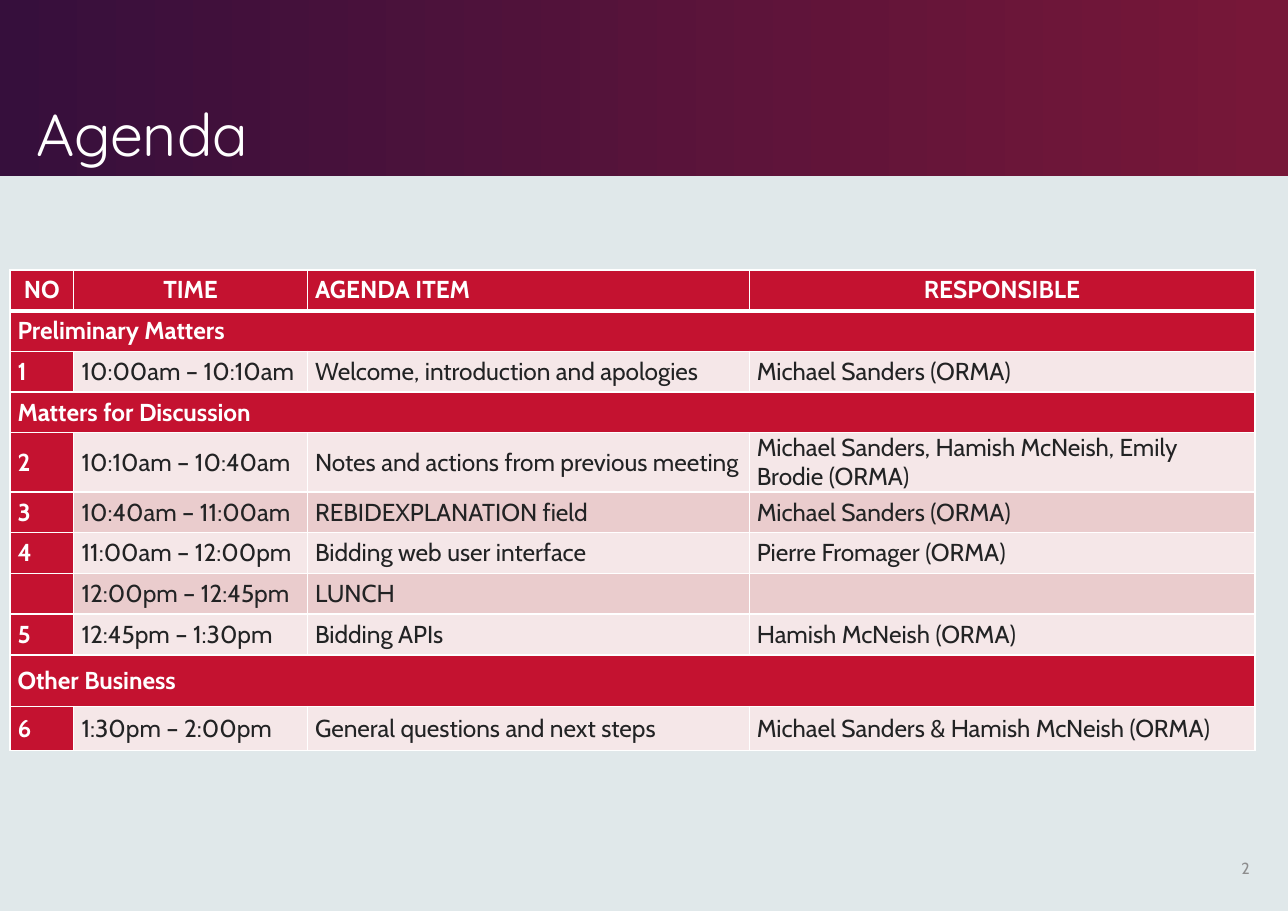
"""Build the Agenda slide with its timetable of meeting items."""
from dataclasses import dataclass

from lxml.etree import SubElement
from pptx import Presentation
from pptx.dml.color import RGBColor
from pptx.enum.shapes import MSO_SHAPE
from pptx.enum.text import MSO_ANCHOR, MSO_AUTO_SIZE, PP_ALIGN
from pptx.oxml.ns import qn
from pptx.slide import Slide
from pptx.table import Table, _Cell
from pptx.text.text import TextFrame
from pptx.util import Inches, Pt


@dataclass(frozen=True)
class Theme:
    heading_font: str = "Quicksand"
    body_font: str = "Cabin"
    title_size: float = 38.6
    table_size: float = 16
    number_size: float = 10.5
    background: str = "E0E8EA"
    band_start: str = "360F3C"
    band_end: str = "771738"
    red: str = "C41230"
    light_row: str = "F5E7E8"
    dark_row: str = "EACCCD"
    white: str = "FFFFFF"
    ink: str = "222324"
    grey: str = "8D8D8E"


@dataclass(frozen=True)
class Section:
    heading: str
    height: float = 0.37


@dataclass(frozen=True)
class Item:
    number: str
    time: str
    topic: str
    responsible: str = ""
    height: float = 0.37


THEME = Theme()
SLIDE_WIDTH, SLIDE_HEIGHT = 11.69, 8.27
COLUMN_WIDTHS = (0.58, 2.12, 4.01, 4.59)
HEADINGS = Item("NO", "TIME", "AGENDA ITEM", "RESPONSIBLE")
AGENDA: tuple[Section | Item, ...] = (
    Section("Preliminary Matters"),
    Item("1", "10:00am – 10:10am", "Welcome, introduction and apologies", "Michael Sanders (ORMA)"),
    Section("Matters for Discussion"),
    Item("2", "10:10am – 10:40am", "Notes and actions from previous meeting",
         "Michael Sanders, Hamish McNeish, Emily Brodie (ORMA)", 0.53),
    Item("3", "10:40am – 11:00am", "REBIDEXPLANATION field", "Michael Sanders (ORMA)"),
    Item("4", "11:00am – 12:00pm", "Bidding web user interface", "Pierre Fromager (ORMA)"),
    Item("", "12:00pm – 12:45pm", "LUNCH"),
    Item("5", "12:45pm – 1:30pm", "Bidding APIs", "Hamish McNeish (ORMA)"),
    Section("Other Business", 0.47),
    Item("6", "1:30pm – 2:00pm", "General questions and next steps",
         "Michael Sanders & Hamish McNeish (ORMA)", 0.4),
)


def write(frame: TextFrame, text: str, font: str, size: float, color: str,
          bold: bool = False, align: PP_ALIGN = PP_ALIGN.LEFT) -> None:
    """Write one formatted run into the first paragraph of a frame."""
    paragraph = frame.paragraphs[0]
    paragraph.alignment = align
    paragraph.font.size = Pt(size)
    if text:
        run = paragraph.add_run()
        run.text = text
        run.font.name = font
        run.font.size = Pt(size)
        run.font.bold = bold
        run.font.color.rgb = RGBColor.from_string(color)


def draw_border(cell: _Cell, side: str, width: float) -> None:
    """Add a white line on one side of a cell."""
    line = SubElement(cell._tc.get_or_add_tcPr(), qn(f"a:ln{side}"), w=str(Pt(width)))
    SubElement(SubElement(line, qn("a:solidFill")), qn("a:srgbClr"), val=THEME.white)


def style_cell(cell: _Cell, fill: str, top: float = 1, bottom: float = 1) -> None:
    """Set the borders, fill, insets and anchor of a cell."""
    for side, width in (("L", 1), ("R", 1), ("T", top), ("B", bottom)):
        draw_border(cell, side, width)
    cell.fill.solid()
    cell.fill.fore_color.rgb = RGBColor.from_string(fill)
    cell.margin_left = cell.margin_right = Inches(0.07)
    cell.margin_top = cell.margin_bottom = 0
    cell.vertical_anchor = MSO_ANCHOR.MIDDLE


def fill_row(table: Table, index: int, entry: Section | Item) -> None:
    """Write a section heading, the column headings or an agenda item."""
    table.rows[index].height = Inches(entry.height)
    is_header, is_section = index == 0, isinstance(entry, Section)
    texts = ((entry.heading, "", "", "") if isinstance(entry, Section)
             else (entry.number, entry.time, entry.topic, entry.responsible))
    row_fill = THEME.dark_row if index % 2 else THEME.light_row
    for column, text in enumerate(texts):
        cell = table.cell(index, column)
        strong = is_header or is_section or column == 0
        style_cell(cell, THEME.red if strong else row_fill,
                   top=3 if index == 1 else 1, bottom=3 if is_header else 1)
        centred = is_header and column != 2
        write(cell.text_frame, text, THEME.body_font, THEME.table_size,
              THEME.white if strong else THEME.ink, strong,
              PP_ALIGN.CENTER if centred else PP_ALIGN.LEFT)
    if is_section:
        table.cell(index, 0).merge(table.cell(index, len(COLUMN_WIDTHS) - 1))


def add_band(slide: Slide) -> None:
    """Place the gradient band behind the title."""
    band = slide.shapes.add_shape(MSO_SHAPE.RECTANGLE, 0, 0, Inches(SLIDE_WIDTH), Inches(1.6))
    band.shadow.inherit = False
    band.line.fill.background()
    band.fill.gradient()
    band.fill.gradient_angle = 0
    stops = ((0, THEME.band_start), (0.99, THEME.band_end))
    for stop, (position, color) in zip(band.fill.gradient_stops, stops):
        stop.position = position
        stop.color.rgb = RGBColor.from_string(color)
    slide.shapes._spTree.insert(2, band._element)


def add_title(slide: Slide) -> None:
    """Move and format the title placeholder."""
    title = slide.shapes.title
    title.left, title.top = Inches(0.23), Inches(0.16)
    title.width, title.height = Inches(8.63), Inches(1.43)
    frame = title.text_frame
    frame.auto_size = MSO_AUTO_SIZE.NONE
    frame.vertical_anchor = MSO_ANCHOR.BOTTOM
    frame.paragraphs[0].line_spacing = 0.9
    write(frame, "Agenda", THEME.heading_font, THEME.title_size, THEME.white)


def add_agenda(slide: Slide) -> None:
    """Add the agenda table."""
    entries = (HEADINGS, *AGENDA)
    table = slide.shapes.add_table(
        len(entries), len(COLUMN_WIDTHS), Inches(0.09), Inches(2.45),
        Inches(sum(COLUMN_WIDTHS)), Inches(sum(entry.height for entry in entries))).table
    for column, width in zip(table.columns, COLUMN_WIDTHS):
        column.width = Inches(width)
    for index, entry in enumerate(entries):
        fill_row(table, index, entry)


def add_page_number(slide: Slide) -> None:
    """Add the page number at the lower right."""
    page = slide.shapes.add_textbox(Inches(10.89), Inches(7.66), Inches(0.55), Inches(0.44))
    page.text_frame.word_wrap = True
    page.text_frame.vertical_anchor = MSO_ANCHOR.MIDDLE
    write(page.text_frame, "2", THEME.body_font, THEME.number_size, THEME.grey,
          align=PP_ALIGN.RIGHT)


def main() -> None:
    """Build and save the presentation."""
    deck = Presentation()
    deck.slide_width, deck.slide_height = Inches(SLIDE_WIDTH), Inches(SLIDE_HEIGHT)
    slide = deck.slides.add_slide(deck.slide_layouts[5])
    slide.background.fill.solid()
    slide.background.fill.fore_color.rgb = RGBColor.from_string(THEME.background)
    add_band(slide)
    add_title(slide)
    add_agenda(slide)
    add_page_number(slide)
    deck.save("out.pptx")


if __name__ == "__main__":
    main()
